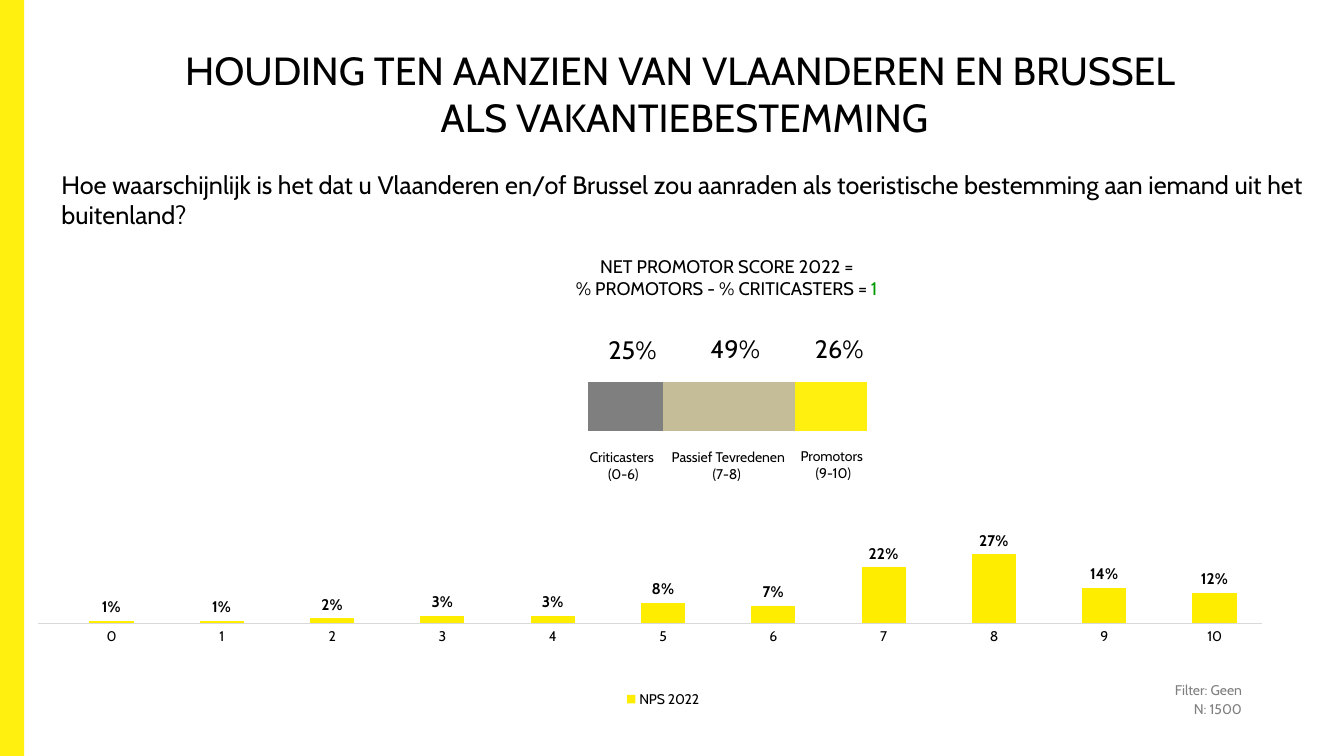
from lxml.etree import SubElement
from pptx import Presentation
from pptx.chart.data import CategoryChartData
from pptx.dml.color import RGBColor
from pptx.enum.chart import XL_CHART_TYPE, XL_LABEL_POSITION, XL_LEGEND_POSITION, XL_TICK_MARK
from pptx.enum.shapes import MSO_CONNECTOR, MSO_SHAPE
from pptx.enum.text import MSO_ANCHOR, MSO_AUTO_SIZE, PP_ALIGN
from pptx.oxml import parse_xml
from pptx.oxml.ns import nsdecls, qn
from pptx.util import Cm, Pt

COLOURS = {
    "yellow": "FFF010", "column": "FFED00", "grey": "7F7F7F", "sand": "C4BD97",
    "black": "000000", "note": "808080", "axis": "D9D9D9", "score": "009900",
}
FONT = "Cabin"


def set_values(target, values):
    for attribute, value in values.items():
        setattr(target, attribute, value)


def write(box, text, size, align, colour="black"):
    frame = box.text_frame
    frame.text = text
    set_values(frame, {"word_wrap": True, "auto_size": MSO_AUTO_SIZE.NONE})
    for paragraph in frame.paragraphs:
        paragraph.alignment = align
        for run in paragraph.runs:
            set_values(run.font, {"name": FONT, "size": Pt(size)})
            run.font.color.rgb = RGBColor.from_string(COLOURS[colour])
    return frame


presentation = Presentation()
set_values(presentation, {"slide_width": Cm(33.87), "slide_height": Cm(19.05)})
slide = presentation.slides.add_slide(presentation.slide_layouts[5])
shapes = slide.shapes

stripe = shapes.add_shape(MSO_SHAPE.RECTANGLE, Cm(0), Cm(0), Cm(0.61), Cm(19.05))
stripe.shadow.inherit = False
stripe.fill.solid()
stripe.fill.fore_color.rgb = RGBColor.from_string(COLOURS["yellow"])
stripe.line.fill.background()

heading = shapes.title
set_values(heading, {"left": Cm(0.61), "top": Cm(0.76), "width": Cm(33.27), "height": Cm(3.18)})
write(
    heading, "HOUDING TEN AANZIEN VAN VLAANDEREN EN BRUSSEL \vALS VAKANTIEBESTEMMING",
    28, PP_ALIGN.CENTER,
).vertical_anchor = MSO_ANCHOR.MIDDLE

ratings = CategoryChartData(number_format="0%")
ratings.categories = [str(rating) for rating in range(11)]
ratings.add_series(
    "NPS 2022", [0.01, 0.01, 0.02, 0.03, 0.03, 0.08, 0.07, 0.22, 0.27, 0.14, 0.12]
)
groups = CategoryChartData()
groups.categories = ["1"]
for number, share in enumerate([27, 47, 26], start=1):
    groups.add_series(f"Series {number}", [share])

charts = []
for kind, data, bounds, plot_area, colours in [
    (XL_CHART_TYPE.COLUMN_CLUSTERED, ratings, (1.42, 9.73, 30.58, 8.2),
     {"x": 0, "y": 0.1, "w": 1, "h": 0.63}, ["column"]),
    (XL_CHART_TYPE.BAR_STACKED_100, groups, (14.43, 8.2, 7.82, 3.86),
     {"x": 0.05, "y": 0.13, "w": 0.9, "h": 0.8}, ["grey", "sand", "yellow"]),
]:
    chart = shapes.add_chart(kind, *map(Cm, bounds), data).chart
    set_values(chart, {"has_title": False, "has_legend": False})
    set_values(chart.font, {"name": FONT, "size": Pt(10)})
    chart.font.color.rgb = RGBColor.from_string(COLOURS["black"])
    set_values(chart.value_axis, {"visible": False, "has_major_gridlines": False})
    set_values(chart.plots[0], {"gap_width": 150, "vary_by_categories": False})
    for series, colour in zip(chart.plots[0].series, colours):
        series.invert_if_negative = False
        series.format.fill.solid()
        series.format.fill.fore_color.rgb = RGBColor.from_string(COLOURS[colour])
    plot_xml = chart.element.find(".//" + qn("c:plotArea"))
    for default_layout in plot_xml.findall(qn("c:layout")):
        plot_xml.remove(default_layout)
    layout = parse_xml(f"<c:layout {nsdecls('c')}><c:manualLayout/></c:layout>")
    positions = {"layoutTarget": "inner", "xMode": "edge", "yMode": "edge", **plot_area}
    for tag, value in positions.items():
        SubElement(layout[0], qn(f"c:{tag}")).set("val", str(value))
    plot_xml.insert(0, layout)
    charts.append(chart)

rating_chart, group_chart = charts
group_chart.category_axis.visible = False
group_chart.plots[0].overlap = 100

set_values(rating_chart.value_axis, {"minimum_scale": 0, "maximum_scale": 0.8})
rating_chart.category_axis.major_tick_mark = XL_TICK_MARK.NONE
rating_chart.category_axis.format.line.fill.background()
rating_chart.has_legend = True
set_values(rating_chart.legend, {"position": XL_LEGEND_POSITION.BOTTOM, "include_in_layout": False})
set_values(rating_chart.legend.font, {"name": FONT, "size": Pt(10)})
percentages = rating_chart.plots[0].series[0].data_labels
set_values(percentages, {
    "show_value": True, "position": XL_LABEL_POSITION.OUTSIDE_END,
    "number_format": "0%", "number_format_is_linked": False,
})
set_values(percentages.font, {"name": FONT, "size": Pt(11), "bold": True})
percentages.font.color.rgb = RGBColor.from_string(COLOURS["black"])

baseline = shapes.add_connector(MSO_CONNECTOR.STRAIGHT, Cm(31.8), Cm(15.72), Cm(0.97), Cm(15.72))
baseline.line.color.rgb = RGBColor.from_string(COLOURS["axis"])
baseline.line.width = Pt(0.75)
SubElement(baseline.element.spPr, qn("a:effectLst"))

frames = {}
for part, bounds, text, size, align, colour in [
    ("question", (1.3, 4.14, 32.13, 1.83),
     "Hoe waarschijnlijk is het dat u Vlaanderen en/of Brussel zou aanraden als "
     "toeristische bestemming aan iemand uit het buitenland?", 18, PP_ALIGN.LEFT, "black"),
    ("filter", (21.87, 17.04, 9.68, 1.35), "Filter: Geen\nN: 1500", 10, PP_ALIGN.RIGHT, "note"),
    ("score", (10.72, 6.32, 15.29, 1.37),
     "NET PROMOTOR SCORE 2022 = \n% PROMOTORS - % CRITICASTERS = ", 13, PP_ALIGN.CENTER, "black"),
    ("critic share", (14.63, 8.31, 2.62, 1.02), "25%", 18, PP_ALIGN.CENTER, "black"),
    ("passive share", (17.22, 8.28, 2.62, 1.02), "49%", 18, PP_ALIGN.CENTER, "black"),
    ("promotor share", (19.84, 8.28, 2.62, 1.02), "26%", 18, PP_ALIGN.CENTER, "black"),
    ("critics", (14.4, 11.18, 2.62, 1.12), "Criticasters \n(0-6)", 10, PP_ALIGN.CENTER, "black"),
    ("passives", (16.59, 11.18, 3.53, 1.12), "Passief Tevredenen (7-8) ",
     10, PP_ALIGN.CENTER, "black"),
    ("promotors", (19.69, 11.15, 2.62, 1.12), "Promotors \v(9-10)", 10, PP_ALIGN.CENTER, "black"),
]:
    frames[part] = write(shapes.add_textbox(*map(Cm, bounds)), text, size, align, colour)

frames["filter"].paragraphs[1].space_before = Pt(2)
net_score = frames["score"].paragraphs[1].add_run()
net_score.text = "1 "
set_values(net_score.font, {"name": FONT, "size": Pt(13)})
net_score.font.color.rgb = RGBColor.from_string(COLOURS["score"])

presentation.save("out.pptx")
